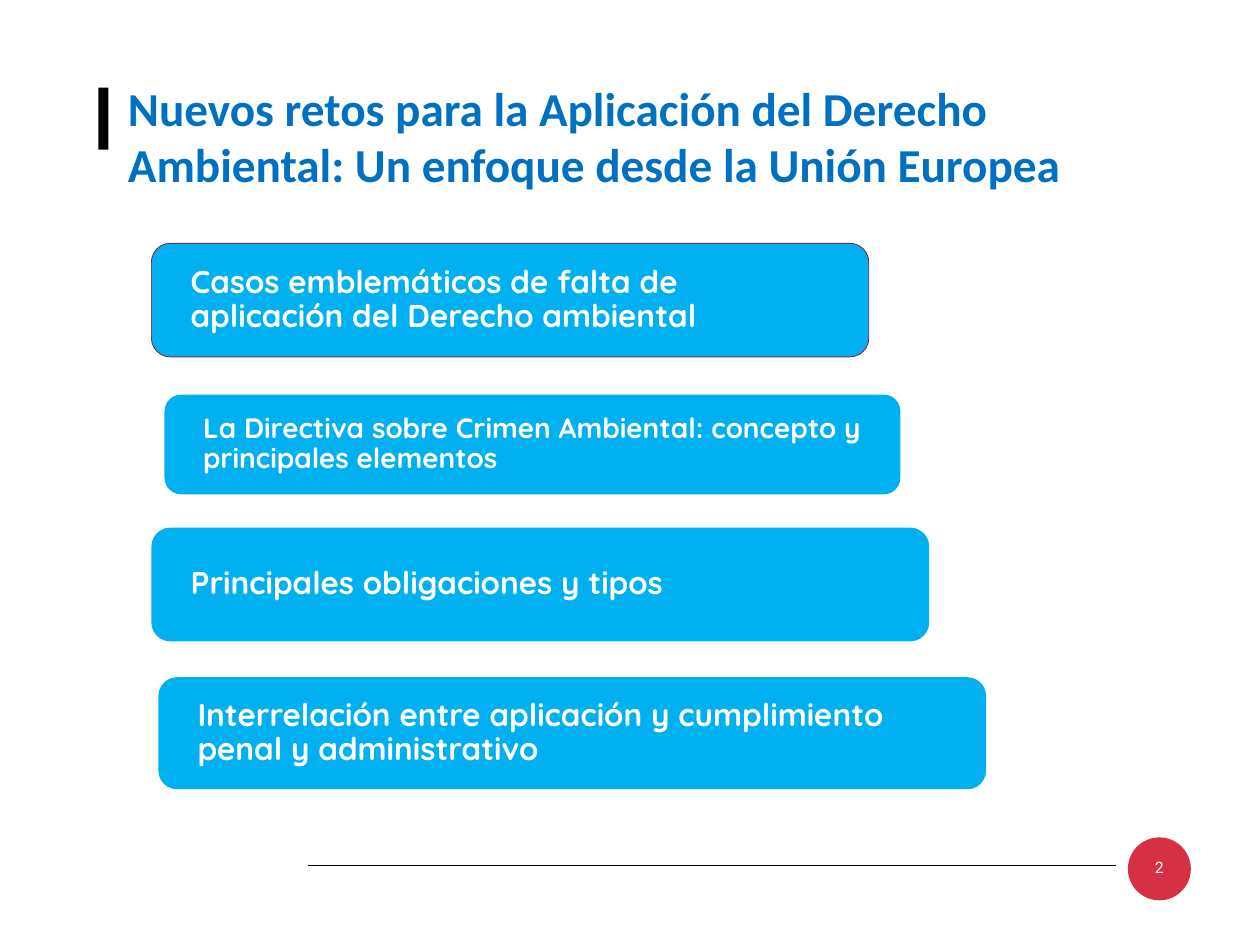
from pptx import Presentation
from pptx.dml.color import RGBColor
from pptx.enum.shapes import MSO_CONNECTOR, MSO_SHAPE
from pptx.enum.text import MSO_ANCHOR as ANCHOR, MSO_AUTO_SIZE, PP_ALIGN as ALIGN
from pptx.oxml import parse_xml
from pptx.oxml.ns import nsdecls
from pptx.util import Pt

BLACK, WHITE, BLUE = "000000", "FFFFFF", "0070C0"
SKY, RED, DARK_RED = "00B0F0", "D53044", "990000"

# left, top, width, height, text size, outline, text
TOPICS = [
    (173, 278, 820, 130, 36, DARK_RED,
     "Casos emblemáticos de falta de aplicación del Derecho ambiental"),
    (188, 451, 841, 114, 32, None,
     "La Directiva sobre Crimen Ambiental: concepto y principales elementos"),
    (173, 603, 889, 130, 36, None, "Principales obligaciones y tipos"),
    (181, 774, 946, 128, 36, None,
     "Interrelación entre aplicación y cumplimiento penal y administrativo"),
]


def rgb(color):
    return RGBColor.from_string(color)


def add_shape(s, kind, left, top, width, height, fill, outline=None):
    sp = s.shapes.add_shape(kind, Pt(left), Pt(top), Pt(width), Pt(height))
    sp.shadow.inherit = False
    sp.fill.solid()
    sp.fill.fore_color.rgb = rgb(fill)
    if outline:
        sp.line.color.rgb = rgb(outline)
        sp.line.width = Pt(0.75)
    else:
        sp.line.fill.background()
    return sp


def write(sp, text, font, size, color, bold=False, align=ALIGN.LEFT,
          anchor=ANCHOR.MIDDLE, inset=(0, 0, 0, 0)):
    """Fill a shape with one run; inset is left, top, right, bottom."""
    tf = sp.text_frame
    tf.word_wrap = True
    tf.auto_size = MSO_AUTO_SIZE.NONE
    tf.vertical_anchor = anchor
    (tf.margin_left, tf.margin_top,
     tf.margin_right, tf.margin_bottom) = map(Pt, inset)
    p = tf.paragraphs[0]
    p.alignment = align
    r = p.add_run()
    r.text = text
    r.font.name, r.font.size, r.font.bold = font, Pt(size), bold
    r.font.color.rgb = rgb(color)
    return p


def add_title(s, text):
    sp = s.shapes.title
    sp.left, sp.top, sp.width, sp.height = map(Pt, (139, 86.5, 1204.5, 138))
    write(sp, text, "Calibri", 54, BLUE, bold=True, anchor=ANCHOR.TOP,
          inset=(7.2, 3.6, 7.2, 3.6))
    add_shape(s, MSO_SHAPE.RECTANGLE, 112.5, 100, 11.5, 71, BLACK)


def add_topic(s, left, top, width, height, size, outline, text):
    sp = add_shape(s, MSO_SHAPE.ROUNDED_RECTANGLE, left, top, width, height,
                   SKY, outline)
    p = write(sp, text, "Quicksand", size, WHITE, bold=True,
              inset=(38.5, 0, 38.5, 0))
    p.line_spacing = 0.9


def add_footer(s, number):
    line = s.shapes.add_connector(MSO_CONNECTOR.STRAIGHT, Pt(352), Pt(988.5),
                                  Pt(1276), Pt(988.5))
    line.line.color.rgb = rgb(BLACK)
    line.line.width = Pt(0.25)
    effects = parse_xml(f"<a:effectLst {nsdecls('a')}/>")
    line._element.spPr.append(effects)
    badge = add_shape(s, MSO_SHAPE.OVAL, 1289, 957, 72, 72, RED)
    write(badge, number, "Roboto", 18, WHITE, align=ALIGN.CENTER,
          inset=(0, 0, 0, 4))


def main():
    prs = Presentation()
    prs.slide_width, prs.slide_height = Pt(1440), Pt(1080)
    s = prs.slides.add_slide(prs.slide_layouts[5])
    add_footer(s, "2")
    for topic in TOPICS:
        add_topic(s, *topic)
    add_title(s, "Nuevos retos para la Aplicación del Derecho Ambiental: "
                 "Un enfoque desde la Unión Europea")
    prs.save("out.pptx")


if __name__ == "__main__":
    main()
